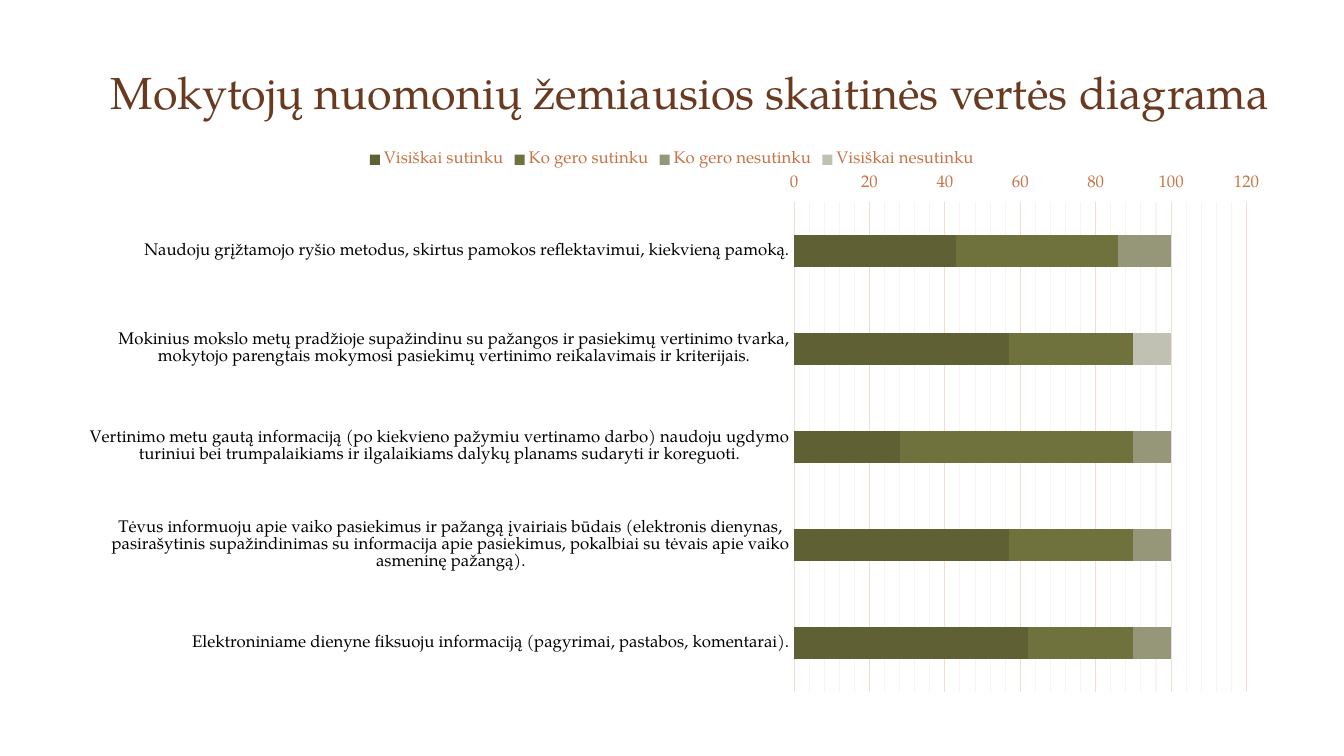
from copy import deepcopy

from lxml import etree
from pptx import Presentation
from pptx.chart.data import CategoryChartData
from pptx.dml.color import RGBColor
from pptx.enum.chart import XL_CHART_TYPE as ChartType
from pptx.enum.chart import XL_LEGEND_POSITION as LegendPosition
from pptx.enum.chart import XL_TICK_LABEL_POSITION as LabelPosition
from pptx.enum.chart import XL_TICK_MARK as TickMark
from pptx.enum.text import MSO_ANCHOR as Anchor
from pptx.oxml.ns import qn
from pptx.util import Pt

TITLE = "Mokytojų nuomonių žemiausios skaitinės vertės diagrama"
STATEMENTS = [
    "Elektroniniame dienyne fiksuoju informaciją (pagyrimai, pastabos, komentarai).",
    "Tėvus informuoju apie vaiko pasiekimus ir pažangą įvairiais būdais (elektronis dienynas, "
    "pasirašytinis supažindinimas su informacija apie pasiekimus, pokalbiai su tėvais apie vaiko "
    "asmeninę pažangą).",
    "Vertinimo metu gautą informaciją (po kiekvieno pažymiu vertinamo darbo) naudoju ugdymo "
    "turiniui bei trumpalaikiams ir ilgalaikiams dalykų planams sudaryti ir koreguoti.",
    "Mokinius mokslo metų pradžioje supažindinu su pažangos ir pasiekimų vertinimo tvarka, "
    "mokytojo parengtais mokymosi pasiekimų vertinimo reikalavimais ir kriterijais.",
    "Naudoju grįžtamojo ryšio metodus, skirtus pamokos reflektavimui, kiekvieną pamoką.",
]
ANSWERS = [
    ("Visiškai sutinku", (62, 57, 28, 57, 43), "5F6033"),
    ("Ko gero sutinku", (28, 33, 62, 33, 43), "70723D"),
    ("Ko gero nesutinku", (10, 10, 10, 0, 14), "959778"),
    ("Visiškai nesutinku", (0, 0, 0, 10, 0), "C0C1B3"),
]
COLORS = {
    "title": "6A3A20",
    "scale": "C77345",
    "label": "000000",
    "grid": "F2DFD4",
    "minor_grid": "FAF4F0",
}
FONT = "TeX Gyre Pagella"
PLOT_LAYOUT = {"x": 0.6, "y": 0.11, "w": 0.37, "h": 0.87}


def style_font(font, size, color):
    font.name = FONT
    font.size = Pt(size)
    font.bold = False
    font.color.rgb = RGBColor.from_string(COLORS[color])


def style_line(line, color):
    line.width = Pt(0.75)
    line.color.rgb = RGBColor.from_string(COLORS[color])


def add_text(page, text, *, left, top, width, height, size, color):
    box = page.shapes.add_textbox(Pt(left), Pt(top), Pt(width), Pt(height))
    frame = box.text_frame
    frame.word_wrap = True
    frame.vertical_anchor = Anchor.BOTTOM
    span = frame.paragraphs[0].add_run()
    span.text = text
    style_font(span.font, size, color)


def style_gridlines(axis):
    axis.has_major_gridlines = axis.has_minor_gridlines = True
    style_line(axis.major_gridlines.format.line, "grid")
    major = axis._element.find(qn("c:majorGridlines"))
    minor = axis._element.find(qn("c:minorGridlines"))
    minor.append(deepcopy(major.find(qn("c:spPr"))))
    for color in minor.iter(qn("a:srgbClr")):
        color.set("val", COLORS["minor_grid"])


def set_plot_layout(chart):
    plot_area = chart.plots[0]._element.getparent()
    layout = plot_area.find(qn("c:layout"))
    if layout is None:
        layout = etree.Element(qn("c:layout"))
        plot_area.insert(0, layout)
    manual = etree.SubElement(layout, qn("c:manualLayout"))
    entries = [("layoutTarget", "inner"), ("xMode", "edge"), ("yMode", "edge"), *PLOT_LAYOUT.items()]
    for name, value in entries:
        etree.SubElement(manual, qn(f"c:{name}")).set("val", str(value))


def add_answer_chart(page):
    data = CategoryChartData()
    data.categories = STATEMENTS
    for name, values, _ in ANSWERS:
        data.add_series(name, values)
    frame = page.shapes.add_chart(
        ChartType.BAR_STACKED, Pt(43.2), Pt(100), Pt(873.4), Pt(402.5), data
    )
    chart = frame.chart
    chart.has_title = False
    style_font(chart.font, 10, "title")

    chart.has_legend = True
    chart.legend.position = LegendPosition.TOP
    chart.legend.include_in_layout = False
    style_font(chart.legend.font, 12, "scale")

    plot = chart.plots[0]
    plot.vary_by_categories = False
    plot.gap_width = 199
    plot.overlap = 100
    for series, (_, _, color) in zip(plot.series, ANSWERS):
        series.format.fill.solid()
        series.format.fill.fore_color.rgb = RGBColor.from_string(color)

    for axis, color in ((chart.category_axis, "label"), (chart.value_axis, "scale")):
        axis.major_tick_mark = TickMark.NONE
        axis.minor_tick_mark = TickMark.NONE
        style_font(axis.tick_labels.font, 12, color)
    style_line(chart.category_axis.format.line, "grid")

    scale = chart.value_axis
    scale.minimum_scale, scale.maximum_scale = 0, 120
    scale.major_unit, scale.minor_unit = 20, 4
    scale.tick_label_position = LabelPosition.HIGH
    scale.format.line.fill.background()
    style_gridlines(scale)
    set_plot_layout(chart)


def main():
    deck = Presentation()
    deck.slide_width, deck.slide_height = Pt(960), Pt(540)
    page = deck.slides.add_slide(deck.slide_layouts[6])
    add_text(page, TITLE, left=72, top=33.8, width=850.3, height=54.7, size=32, color="title")
    add_answer_chart(page)
    deck.save("out.pptx")


if __name__ == "__main__":
    main()
